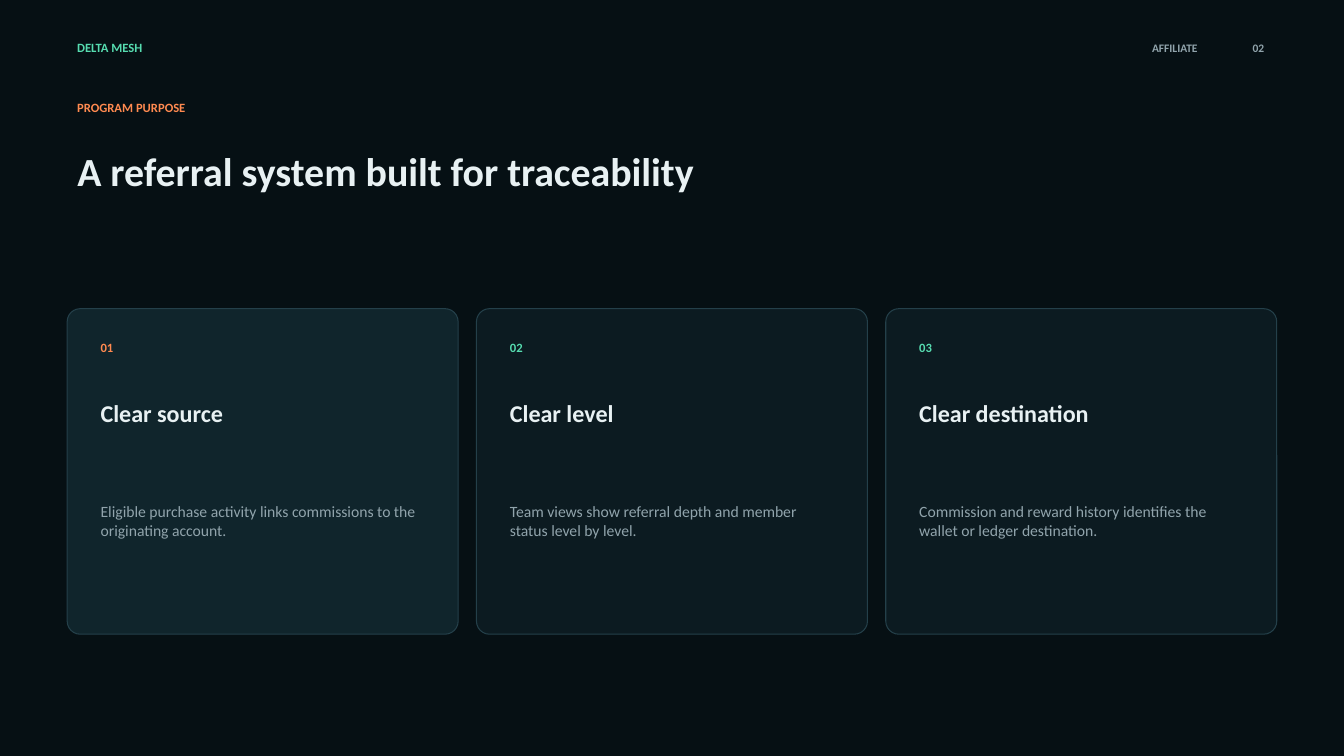
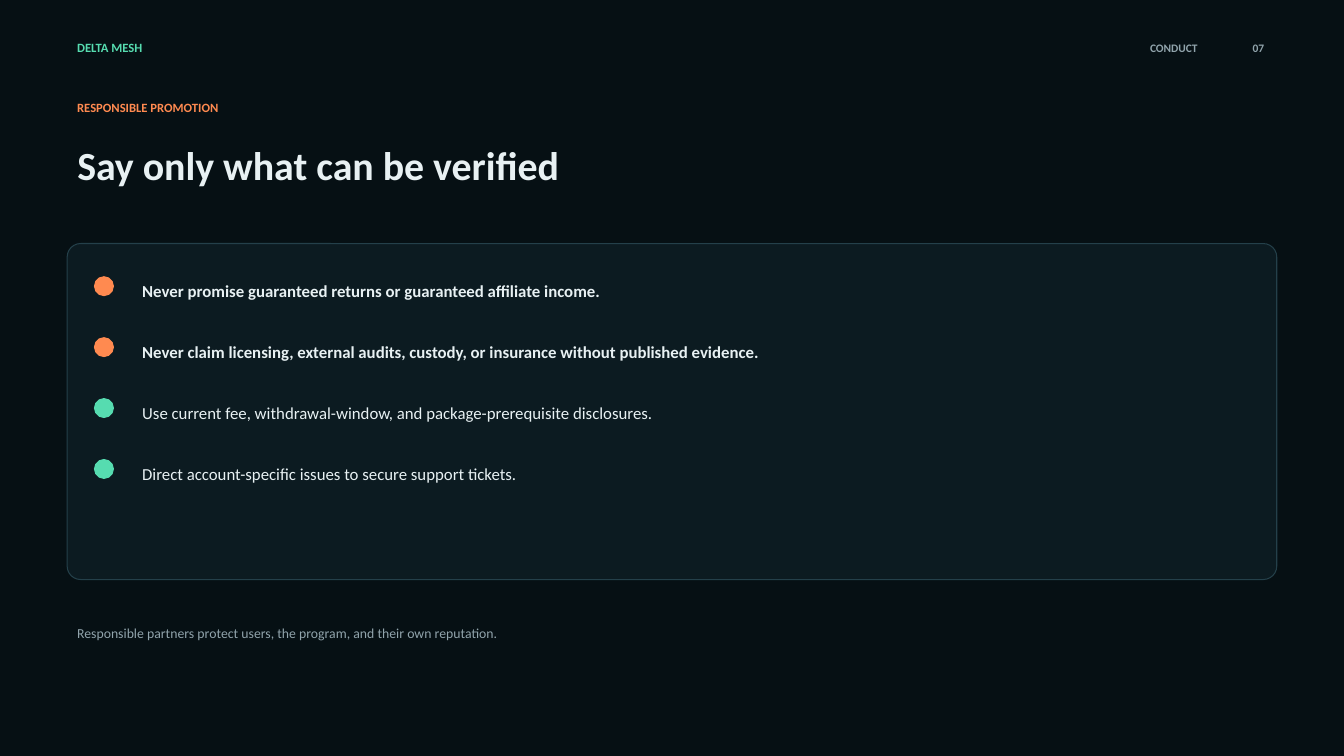
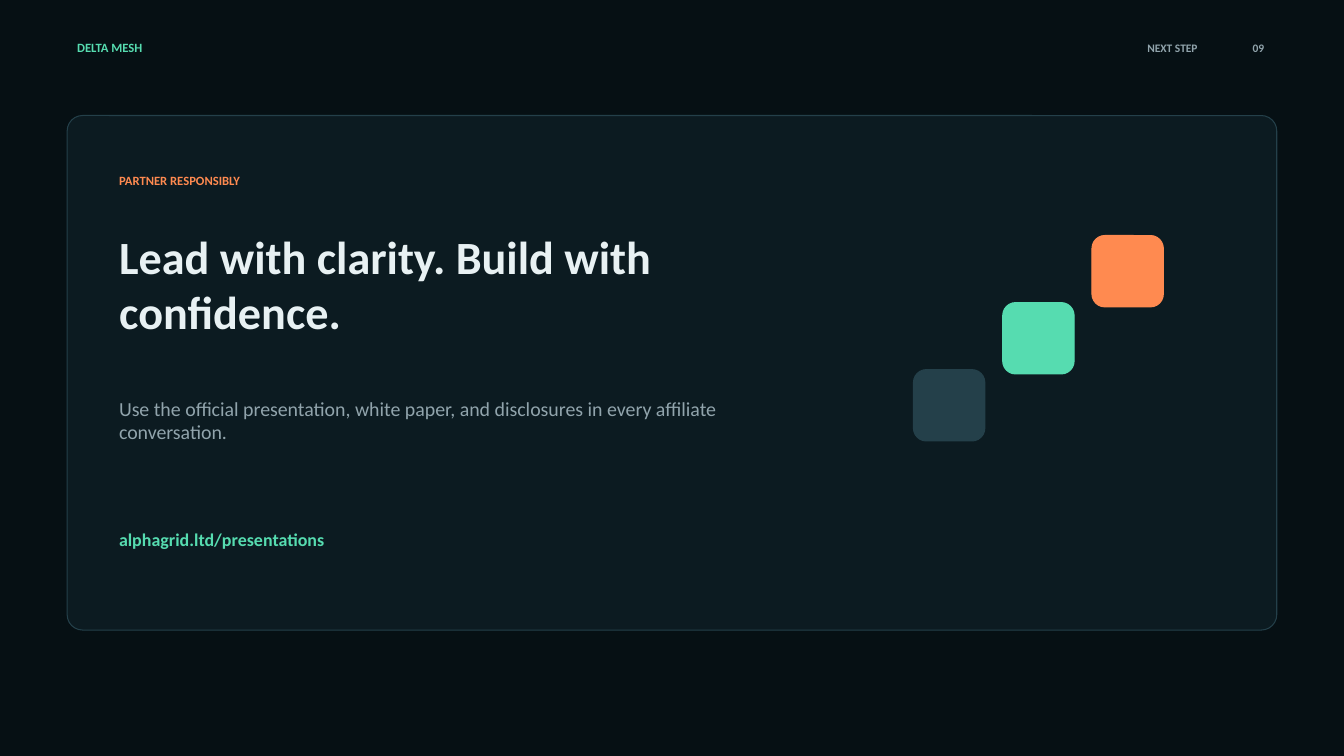
from pptx import Presentation
from pptx.dml.color import RGBColor
from pptx.enum.shapes import MSO_SHAPE as Shape
from pptx.enum.text import MSO_ANCHOR as Anchor, MSO_AUTO_SIZE as AutoSize, PP_ALIGN as Align
from pptx.util import Inches, Pt

COLORS = {
    "night": "061014",
    "panel": "0C1B21",
    "raised": "10252C",
    "edge": "24404A",
    "mint": "56DCB0",
    "orange": "FF8A50",
    "white": "E8F1F3",
    "gray": "91A4AC",
}
MARGIN = 5
CONTENT_WIDTH = 100 - 2 * MARGIN


def color(name):
    """Return a named palette colour."""
    return RGBColor.from_string(COLORS[name])


class DarkDeck:
    """Hold the style and the current slide, with lengths in percent of the slide."""

    font = "Calibri"

    def __init__(self):
        """Start a wide deck with a dark master background."""
        self.deck = Presentation()
        self.deck.slide_width, self.deck.slide_height = Inches(13.33), Inches(7.5)
        fill = self.deck.slide_master.background.fill
        fill.solid()
        fill.fore_color.rgb = color("night")

    def place(self, left, top, width, height):
        """Convert percent shares to slide lengths."""
        across, down = self.deck.slide_width / 100, self.deck.slide_height / 100
        return [round(v) for v in (left * across, top * down, width * across, height * down)]

    def add_slide(self, section, number):
        """Add a slide with its header line."""
        self.page = self.deck.slides.add_slide(self.deck.slide_layouts[5])
        self.text("DELTA MESH", (MARGIN, 4.67, 18, 3.33), 9, "mint", bold=True)
        for label, left, width in ((section, 68.75, 21.1), (number, 90.6, 4.2)):
            self.text(label, (left, 4.67, width, 3.33), 8.2, "gray", bold=True, align=Align.RIGHT)

    def set_text(self, box, text, size, ink, bold, align):
        """Fill a box with one formatted paragraph."""
        frame = box.text_frame
        frame.text = text
        frame.word_wrap = True
        frame.auto_size = AutoSize.NONE
        frame.vertical_anchor = Anchor.MIDDLE
        para = frame.paragraphs[0]
        para.alignment = align
        for span in para.runs:
            span.font.name = self.font
            span.font.size = Pt(size)
            span.font.bold = bold
            span.font.color.rgb = color(ink)

    def text(self, text, area, size, ink, bold=False, align=Align.LEFT):
        """Add a text box."""
        box = self.page.shapes.add_textbox(*self.place(*area))
        self.set_text(box, text, size, ink, bold, align)

    def title(self, text, area, size=28.5):
        """Move the title placeholder to its place, in front of earlier shapes."""
        shapes = self.page.shapes
        box = shapes.title
        box.left, box.top, box.width, box.height = self.place(*area)
        self.set_text(box, text, size, "white", True, Align.LEFT)
        shapes.element.append(box.element)

    def eyebrow(self, text, left=MARGIN, top=12.5):
        """Add the small orange label above a title."""
        self.text(text, (left, top, 39, 3.33), 9, "orange", bold=True)

    def rounded(self, area, radius, fill="panel", line="edge"):
        """Add a rounded rectangle."""
        box = self.page.shapes.add_shape(Shape.ROUNDED_RECTANGLE, *self.place(*area))
        box.adjustments[0] = radius
        box.shadow.inherit = False
        box.fill.solid()
        box.fill.fore_color.rgb = color(fill)
        box.line.color.rgb = color(line)
        box.line.width = Pt(0.75)

    def card(self, left, width, number, heading, body, fill, accent):
        """Add a numbered card with heading and body."""
        inset = 1.75
        inner = width - 2 * inset
        self.rounded((left, 40.83, width, 43.06), 0.04, fill)
        left += inset
        self.text(number, (left, 44, 4.7, 3.89), 9, accent, bold=True)
        self.text(heading, (left, 50.28, inner, 8.61), 17.2, "white", bold=True)
        self.text(body, (left, 60.83, inner, 16.11), 11.2, "gray")

    def rule(self, top, text, accent, bold):
        """Add a dotted line of the checklist."""
        self.rounded((7.03, top + 0.5, 1.41, 2.5), 0.5, accent, accent)
        self.text(text, (9.84, top, 79.7, 4.7), 12, "white", bold=bold)


def purpose_slide(style):
    """Build the three-card slide."""
    cards = [
        ("Clear source", "Eligible purchase activity links commissions to the originating account."),
        ("Clear level", "Team views show referral depth and member status level by level."),
        ("Clear destination", "Commission and reward history identifies the wallet or ledger destination."),
    ]
    style.add_slide("AFFILIATE", "02")
    style.eyebrow("PROGRAM PURPOSE")
    style.title("A referral system built for traceability", (MARGIN, 16.94, 86, 11.11))
    gap = 1.36
    width = (CONTENT_WIDTH - gap * (len(cards) - 1)) / len(cards)
    for index, (heading, body) in enumerate(cards):
        fill, accent = ("panel", "mint") if index else ("raised", "orange")
        style.card(MARGIN + index * (width + gap), width, f"{index + 1:02}", heading, body, fill, accent)


def conduct_slide(style):
    """Build the checklist slide."""
    rules = [
        ("Never promise guaranteed returns or guaranteed affiliate income.", True),
        ("Never claim licensing, external audits, custody, or insurance without published evidence.", True),
        ("Use current fee, withdrawal-window, and package-prerequisite disclosures.", False),
        ("Direct account-specific issues to secure support tickets.", False),
    ]
    style.add_slide("CONDUCT", "07")
    style.eyebrow("RESPONSIBLE PROMOTION")
    style.title("Say only what can be verified", (MARGIN, 16.94, 86, 9.72))
    style.rounded((MARGIN, 32.22, CONTENT_WIDTH, 44.44), 0.04)
    for index, (text, warning) in enumerate(rules):
        style.rule(36.11 + 8.06 * index, text, "orange" if warning else "mint", warning)
    note = "Responsible partners protect users, the program, and their own reputation."
    style.text(note, (MARGIN, 81.2, 87.5, 5), 9.8, "gray")


def closing_slide(style):
    """Build the closing slide with its rising steps."""
    left = 8.12
    style.add_slide("NEXT STEP", "09")
    style.rounded((MARGIN, 15.28, CONTENT_WIDTH, 68.06), 0.03)
    style.eyebrow("PARTNER RESPONSIBLY", left, 22.22)
    style.title("Lead with clarity. Build with confidence.", (left, 28.5, 56.25, 18), 33)
    message = "Use the official presentation, white paper, and disclosures in every affiliate conversation."
    style.text(message, (left, 49.3, 52.35, 12.5), 14.2, "gray")
    for index, fill in enumerate(("edge", "mint", "orange")):
        style.rounded((67.97 + 6.64 * index, 48.9 - 8.87 * index, 5.31, 9.44), 0.18, fill, fill)
    style.text("alphagrid.ltd/presentations", (left, 68.7, 42.2, 5.3), 12.8, "mint", bold=True)


def main():
    """Build and save the deck."""
    style = DarkDeck()
    for build in (purpose_slide, conduct_slide, closing_slide):
        build(style)
    style.deck.save("out.pptx")


if __name__ == "__main__":
    main()
